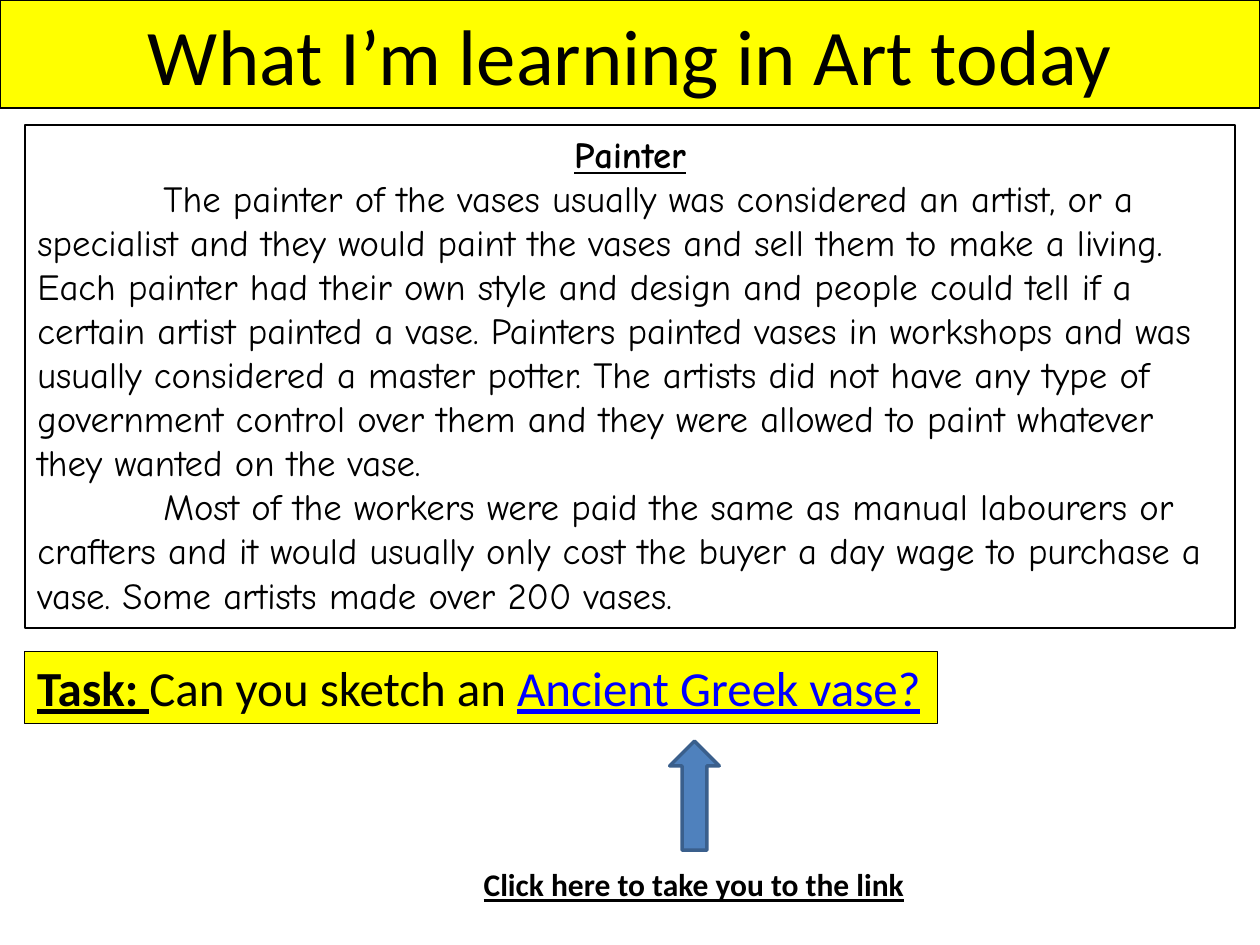
from dataclasses import dataclass

from pptx import Presentation
from pptx.dml.color import RGBColor
from pptx.enum.shapes import MSO_SHAPE
from pptx.enum.text import MSO_ANCHOR, MSO_AUTO_SIZE, PP_ALIGN
from pptx.oxml.ns import qn
from pptx.util import Cm, Pt


@dataclass(frozen=True)
class Theme:
    black: str = "000000"
    yellow: str = "FFFF00"
    link: str = "0000FF"
    arrow: str = "4F81BD"
    arrow_edge: str = "3A5F8C"
    font: str = "Calibri"
    reading_font: str = "Comic Neue"
    title: float = 45
    reading: float = 21
    task: float = 28
    hint: float = 18


PAINTER = (
    "The painter of the vases usually was considered an artist, or a specialist "
    "and they would paint the vases and sell them to make a living. Each painter "
    "had their own style and design and people could tell if a certain artist "
    "painted a vase. Painters painted vases in workshops and was usually "
    "considered a master potter. The artists did not have any type of government "
    "control over them and they were allowed to paint whatever they wanted on "
    "the vase."
)
WORKERS = (
    "Most of the workers were paid the same as manual labourers or crafters and "
    "it would usually only cost the buyer a day wage to purchase a vase. Some "
    "artists made over 200 vases."
)


def add_run(p, text, *, size, font, color, bold=False, underline=False):
    r = p.add_run()
    r.text = text
    r.font.size, r.font.name = Pt(size), font
    r.font.bold, r.font.underline = bold, underline
    r.font.color.rgb = RGBColor.from_string(color)


class LessonSlide:
    def __init__(self, prs, theme):
        self.theme = theme
        self.slide = prs.slides.add_slide(prs.slide_layouts[1])

    def place(self, sp, box):
        sp.left, sp.top, sp.width, sp.height = (Cm(v) for v in box)

    def paint(self, sp, fill=None, line=None, weight=1):
        if fill:
            sp.fill.solid()
            sp.fill.fore_color.rgb = RGBColor.from_string(fill)
        if line:
            sp.line.color.rgb = RGBColor.from_string(line)
            sp.line.width = Pt(weight)

    def frame(self, sp, anchor=MSO_ANCHOR.TOP):
        tf = sp.text_frame
        tf.word_wrap, tf.auto_size = True, MSO_AUTO_SIZE.NONE
        tf.vertical_anchor = anchor
        return tf

    def title(self, text, box):
        t, sp = self.theme, self.slide.shapes.title
        self.place(sp, box)
        self.paint(sp, t.yellow, t.black)
        p = self.frame(sp, MSO_ANCHOR.MIDDLE).paragraphs[0]
        p.alignment = PP_ALIGN.CENTER
        add_run(p, text, size=t.title, font=t.font, color=t.black)

    def reading(self, heading, paragraphs, box):
        t, sp = self.theme, self.slide.placeholders[1]
        self.place(sp, box)
        self.paint(sp, line=t.black)
        tf = self.frame(sp)
        for i, text in enumerate([heading, *paragraphs]):
            is_heading = i == 0
            p = tf.paragraphs[0] if is_heading else tf.add_paragraph()
            p.alignment = PP_ALIGN.CENTER if is_heading else PP_ALIGN.LEFT
            p.space_before = Pt(0)
            # No bullet; body paragraphs start with a first-line indent
            pPr = p._p.get_or_add_pPr()
            pPr.set("marL", "0")
            pPr.set("indent", str(0 if is_heading else Cm(2.54)))
            pPr.append(pPr.makeelement(qn("a:buNone"), {}))
            add_run(p, text, size=t.reading, font=t.reading_font,
                    color=t.black, bold=is_heading, underline=is_heading)

    def text(self, runs, box, size, fill=None, line=None, weight=1):
        t = self.theme
        sp = self.slide.shapes.add_textbox(*(Cm(v) for v in box))
        self.paint(sp, fill, line, weight)
        p = self.frame(sp).paragraphs[0]
        for text, style in runs:
            add_run(p, text, **{"size": size, "font": t.font,
                                "color": t.black, **style})

    def up_arrow(self, box):
        t = self.theme
        sp = self.slide.shapes.add_shape(MSO_SHAPE.UP_ARROW,
                                         *(Cm(v) for v in box))
        sp.shadow.inherit = False
        self.paint(sp, t.arrow, t.arrow_edge, 2)


def main():
    prs = Presentation()
    prs.slide_width, prs.slide_height = Cm(25.4), Cm(19.05)
    theme = Theme()
    lesson = LessonSlide(prs, theme)
    strong = {"bold": True, "underline": True}
    margin = 0.5

    # Title and reading passage
    lesson.title("What I’m learning in Art today", (0, 0, 25.4, 2.18))
    lesson.reading("Painter", [PAINTER, WORKERS], (margin, 2.52, 24.4, 10.14))

    # Task
    lesson.text(
        [("Task: ", strong),
         ("Can you sketch an ", {}),
         ("Ancient Greek vase?", {"color": theme.link, "underline": True})],
        (margin, 13.13, 18.4, 1.45), theme.task,
        fill=theme.yellow, line=theme.black, weight=0.75)

    # Arrow and hint under the task
    lesson.up_arrow((13.5, 14.94, 1, 2.2))
    lesson.text([("Click here to take you to the link", strong)],
                (9.5, 17.32, 9.4, 1.02), theme.hint)

    prs.save("out.pptx")


if __name__ == "__main__":
    main()
